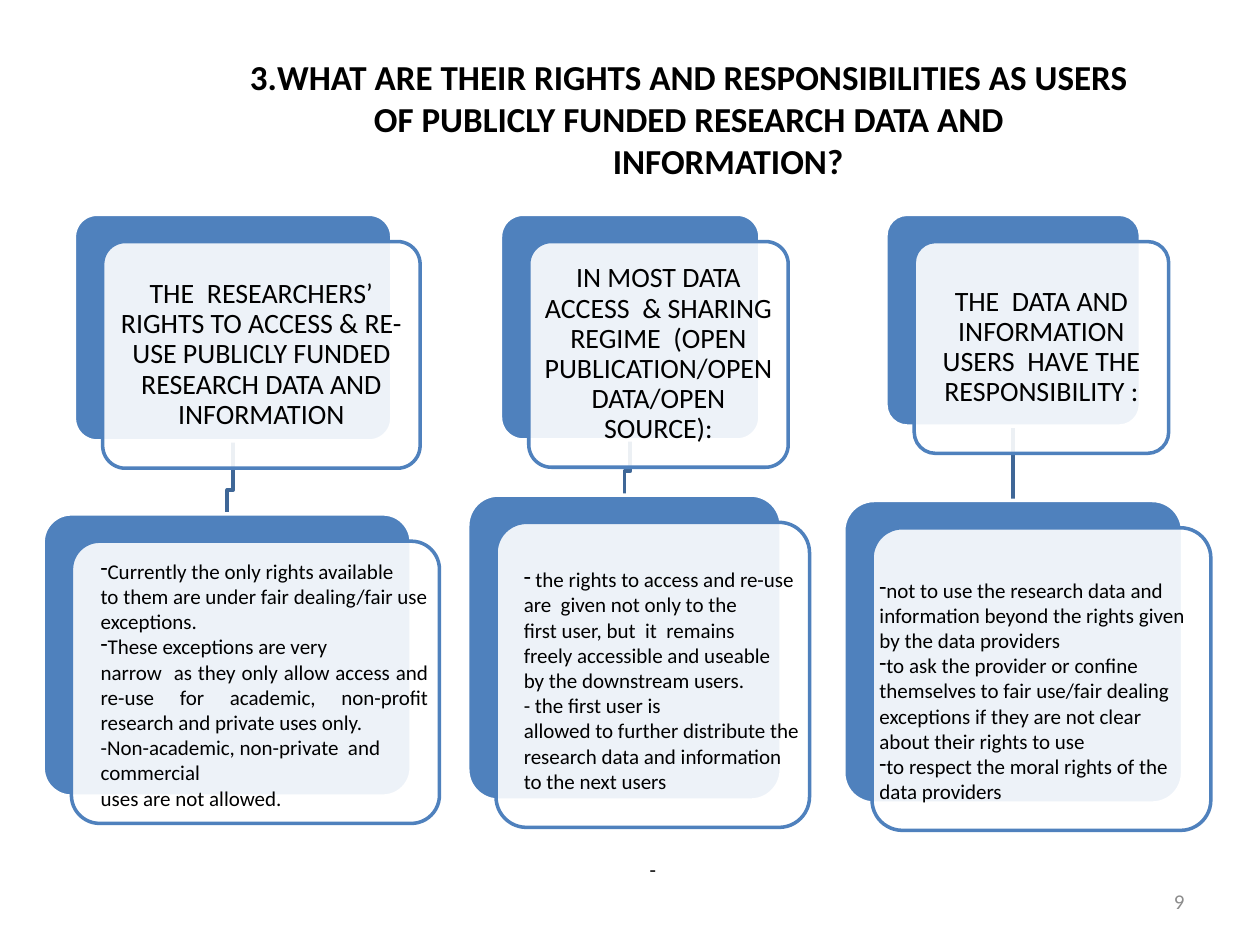
from dataclasses import dataclass

from lxml import etree
from pptx import Presentation
from pptx.dml.color import RGBColor
from pptx.enum import shapes, text
from pptx.oxml import ns
from pptx.util import Cm, Pt

BLACK = RGBColor(0x00, 0x00, 0x00)
WHITE = RGBColor(0xFF, 0xFF, 0xFF)
GREY = RGBColor(0x8C, 0x8C, 0x8C)
BLUE = RGBColor(0x4F, 0x81, 0xBD)
DARK_BLUE = RGBColor(0x3F, 0x67, 0x97)
FONT = "Calibri"
CARD_SHIFT = (0.57, 0.55)  # front card against back card, cm
BEND_GAP = 0.48  # link bend above the lower card, cm
LEFT, CENTER = text.PP_ALIGN.LEFT, text.PP_ALIGN.CENTER
RIGHT, JUSTIFY = text.PP_ALIGN.RIGHT, text.PP_ALIGN.JUSTIFY


@dataclass
class Box:
    """A rectangle in centimetres."""
    x: float
    y: float
    w: float
    h: float

    @property
    def mid(self) -> float:
        return self.x + self.w / 2

    def moved(self, dx: float, dy: float) -> "Box":
        return Box(self.x + dx, self.y + dy, self.w, self.h)

    def emu(self) -> tuple:
        return Cm(self.x), Cm(self.y), Cm(self.w), Cm(self.h)


@dataclass
class Line:
    words: str
    dash: bool = False


@dataclass
class Column:
    head: Box
    body: Box
    heading: str
    notes: Box
    lines: list[Line]
    align: text.PP_ALIGN = LEFT
    wrap: bool = False


COLUMNS = [
    Column(
        Box(1.5, 4.32, 6.4, 4.57), Box(0.87, 10.36, 7.42, 5.69),
        "THE  RESEARCHERS’ RIGHTS TO ACCESS & RE-USE PUBLICLY FUNDED "
        "RESEARCH DATA AND INFORMATION",
        Box(1.78, 11.13, 7.11, 5.38),
        [Line("Currently the only rights available", True),
         Line("to them are under fair dealing/fair use"),
         Line("exceptions."),
         Line("These exceptions are very", True),
         Line("narrow  as they only allow access and re-use for academic, "
              "non-profit research and private uses only."),
         Line("-Non-academic, non-private  and"),
         Line("commercial"),
         Line("uses are not allowed.")],
        JUSTIFY, True),
    Column(
        Box(10.09, 4.32, 5.23, 4.55), Box(9.43, 9.98, 6.32, 6.15),
        "IN MOST DATA ACCESS  & SHARING REGIME  (OPEN PUBLICATION/OPEN "
        "DATA/OPEN SOURCE):",
        Box(10.31, 11.3, 6.2, 4.88),
        [Line(" the rights to access and re-use", True),
         Line("are  given not only to the"),
         Line("first user, but  it  remains"),
         Line("freely accessible and useable"),
         Line("by the downstream users."),
         Line("- the first user is"),
         Line("allowed to further distribute the"),
         Line("research data and information"),
         Line("to the next users")]),
    Column(
        Box(17.86, 4.32, 5.13, 4.27), Box(17.01, 10.09, 6.83, 6.1),
        "THE  DATA AND INFORMATION USERS  HAVE THE RESPONSIBILITY :",
        Box(17.48, 11.51, 6.73, 4.88),
        [Line("not to use the research data and", True),
         Line("information beyond the rights given"),
         Line("by the data providers"),
         Line("to ask the provider or confine", True),
         Line("themselves to fair use/fair dealing"),
         Line("exceptions if they are not clear"),
         Line("about their rights to use"),
         Line("to respect the moral rights of the", True),
         Line("data providers")]),
]


def add_run(p, words: str, size: float, color=BLACK, bold=False) -> None:
    r = p.add_run()
    r.text = words
    r.font.name, r.font.size, r.font.bold = FONT, Pt(size), bold
    r.font.color.rgb = color


def next_paragraph(tf, i: int):
    return tf.paragraphs[0] if i == 0 else tf.add_paragraph()


def set_bullet(p, tag: str, **attrs: str) -> None:
    pPr = p._p.get_or_add_pPr()
    pPr.set("marL", "0")
    pPr.set("indent", "0")
    etree.SubElement(pPr, ns.qn(f"a:{tag}"), attrs)


def add_title(s) -> None:
    sp = s.shapes.title
    sp.left, sp.top, sp.width, sp.height = Box(2.54, 0.99, 22.86, 3.18).emu()
    tf = sp.text_frame
    tf.auto_size = text.MSO_AUTO_SIZE.NONE
    tf.vertical_anchor = text.MSO_ANCHOR.TOP
    rows = ["WHAT ARE THEIR RIGHTS AND RESPONSIBILITIES AS USERS ",
            "OF PUBLICLY FUNDED RESEARCH DATA AND ",
            "INFORMATION?"]
    for i, row in enumerate(rows):
        p = next_paragraph(tf, i)
        p.alignment = CENTER
        add_run(p, row, 20, bold=True)
    set_bullet(tf.paragraphs[0], "buAutoNum", type="arabicPeriod", startAt="3")
    tf.paragraphs[-1]._p.get_or_add_pPr().set("marL", str(Cm(1.42)))


def add_link(s, head: Box, body: Box) -> None:
    """Join two cards, straight when their centres line up, else with a step."""
    start, end = head.y + head.h, body.y
    if abs(head.mid - body.mid) < 0.05:
        sp = s.shapes.add_connector(shapes.MSO_CONNECTOR.STRAIGHT, Cm(head.mid),
                                    Cm(start), Cm(head.mid), Cm(end))
        etree.SubElement(sp._element.spPr, ns.qn("a:effectLst"))
    else:
        bend = end - BEND_GAP
        fb = s.shapes.build_freeform(Cm(head.mid), Cm(start))
        fb.add_line_segments([(Cm(head.mid), Cm(bend)), (Cm(body.mid), Cm(bend)),
                              (Cm(body.mid), Cm(end))], close=False)
        sp = fb.convert_to_shape()
        sp.fill.background()
        sp.shadow.inherit = False
    sp.line.color.rgb, sp.line.width = DARK_BLUE, Pt(2)


def add_rounded(s, box: Box, fill: RGBColor, line: RGBColor):
    sp = s.shapes.add_shape(shapes.MSO_SHAPE.ROUNDED_RECTANGLE, *box.emu())
    sp.adjustments[0] = 0.1
    sp.shadow.inherit = False
    sp.fill.solid()
    sp.fill.fore_color.rgb = fill
    sp.line.color.rgb, sp.line.width = line, Pt(2)
    return sp


def add_card(s, box: Box, heading: str = "") -> None:
    add_rounded(s, box, BLUE, WHITE)
    front = add_rounded(s, box.moved(*CARD_SHIFT), WHITE, BLUE)
    color = front._element.spPr.find(ns.qn("a:solidFill"))[0]
    etree.SubElement(color, ns.qn("a:alpha"), val="90000")
    if heading:
        tf = front.text_frame
        tf.word_wrap = True
        tf.vertical_anchor = text.MSO_ANCHOR.MIDDLE
        tf.margin_left = tf.margin_right = tf.margin_top = tf.margin_bottom = Cm(0.05)
        p = tf.paragraphs[0]
        p.alignment, p.line_spacing = CENTER, 0.9
        add_run(p, heading, 16)


def add_text(s, box: Box, lines: list[Line], align, wrap=True, color=BLACK) -> None:
    tf = s.shapes.add_textbox(*box.emu()).text_frame
    tf.word_wrap = wrap
    for i, line in enumerate(lines):
        p = next_paragraph(tf, i)
        p.alignment = align
        if line.dash:
            set_bullet(p, "buChar", char="-")
        add_run(p, line.words, 12, color)


def main() -> None:
    prs = Presentation()
    prs.slide_width, prs.slide_height = Cm(25.4), Cm(19.05)
    s = prs.slides.add_slide(prs.slide_layouts[5])
    add_title(s)
    for col in COLUMNS:
        add_link(s, col.head, col.body)
    for col in COLUMNS:
        add_card(s, col.head, col.heading)
        add_card(s, col.body)
    for col in COLUMNS:
        add_text(s, col.notes, col.lines, col.align, col.wrap)
    add_text(s, Box(10, 17.15, 6.32, 0.76), [Line("-")], CENTER)
    add_text(s, Box(18.21, 17.79, 5.92, 0.76), [Line("9")], RIGHT, color=GREY)
    prs.save("out.pptx")


if __name__ == "__main__":
    main()
